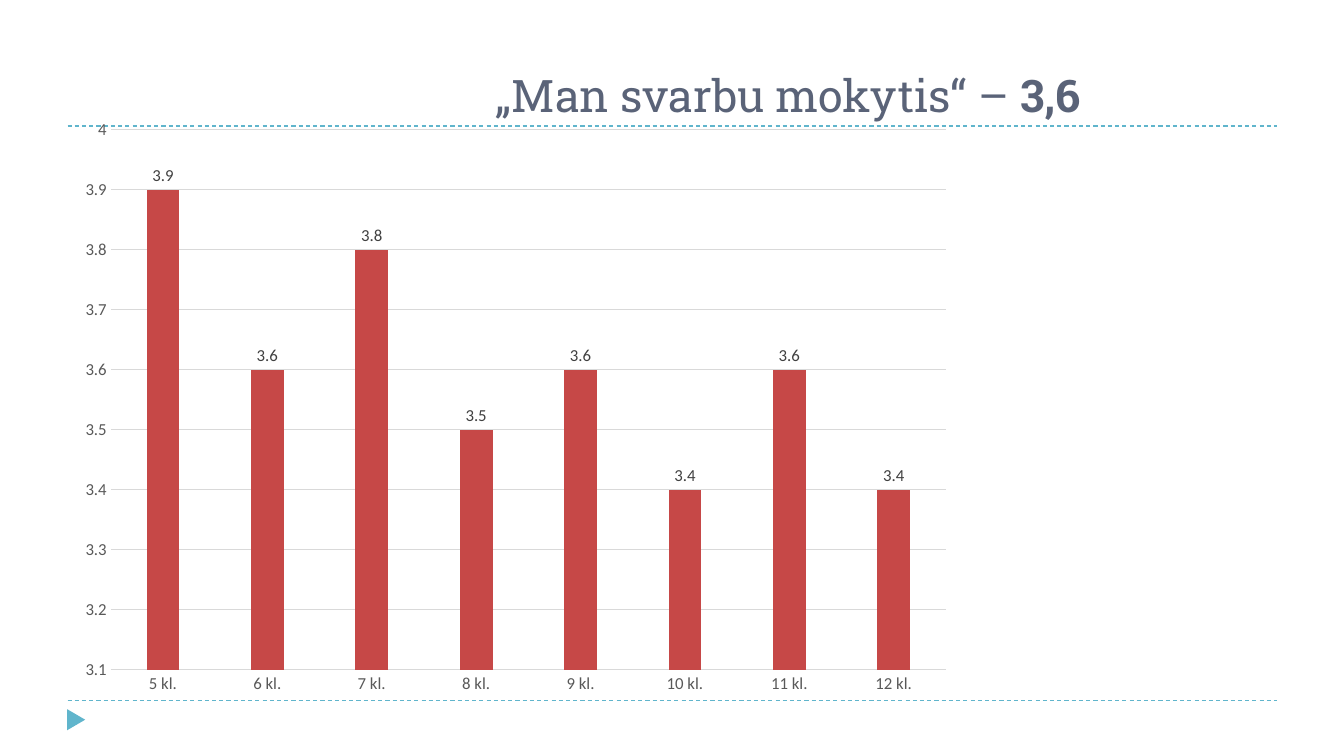
from lxml import etree
from pptx import Presentation
from pptx.chart.data import CategoryChartData
from pptx.dml.color import RGBColor
from pptx.enum.chart import XL_CHART_TYPE, XL_LABEL_POSITION, XL_TICK_MARK
from pptx.enum.dml import MSO_LINE
from pptx.enum.shapes import MSO_CONNECTOR, MSO_SHAPE
from pptx.enum.text import MSO_ANCHOR, PP_ALIGN
from pptx.oxml.ns import qn
from pptx.util import Inches, Pt

TEAL = RGBColor(0x60, 0xB5, 0xCC)
SLATE = RGBColor(0x5A, 0x63, 0x78)
RED = RGBColor(0xC6, 0x48, 0x47)
GRID_GRAY = RGBColor(0xD9, 0xD9, 0xD9)
AXIS_GRAY = RGBColor(0x59, 0x59, 0x59)
LABEL_GRAY = RGBColor(0x40, 0x40, 0x40)


def style_font(font, size, color, name="Calibri"):
    font.name = name
    font.size = Pt(size)
    font.color.rgb = color


prs = Presentation()
prs.slide_width = Inches(13.33)
prs.slide_height = Inches(7.5)
slide = prs.slides.add_slide(prs.slide_layouts[6])
shapes = slide.shapes

# Dashed rules and corner marker
for rule_y in (6.95, 1.25):
    rule = shapes.add_connector(MSO_CONNECTOR.STRAIGHT, Inches(0.67), Inches(rule_y),
                                Inches(12.67), Inches(rule_y))
    rule.line.color.rgb = TEAL
    rule.line.width = Pt(0.75)
    rule.line.dash_style = MSO_LINE.DASH
    etree.SubElement(rule._element.spPr, qn("a:effectLst"))

marker = shapes.add_shape(MSO_SHAPE.ISOSCELES_TRIANGLE, Inches(0.65), Inches(7.05),
                          Inches(0.21), Inches(0.18))
marker.rotation = 90
marker.shadow.inherit = False
marker.fill.solid()
marker.fill.fore_color.rgb = TEAL
marker.line.fill.background()

# Title
title = shapes.add_textbox(Inches(3.82), Inches(0.17), Inches(8), Inches(1.08))
title_frame = title.text_frame
title_frame.word_wrap = True
title_frame.vertical_anchor = MSO_ANCHOR.BOTTOM
heading = title_frame.paragraphs[0]
heading.alignment = PP_ALIGN.CENTER
for words, bold in (("„Man svarbu mokytis“ – ", False), ("3,6", True)):
    run = heading.add_run()
    run.text = words
    run.font.bold = bold
    style_font(run.font, 32, SLATE, "Roboto Slab")

# Average score by grade
scores = CategoryChartData()
scores.categories = [f"{grade} kl." for grade in range(5, 13)]
scores.add_series("Series 1", (3.9, 3.6, 3.8, 3.5, 3.6, 3.4, 3.6, 3.4))
chart = shapes.add_chart(XL_CHART_TYPE.COLUMN_CLUSTERED, Inches(0.67), Inches(1.07),
                         Inches(8.89), Inches(5.93), scores).chart
chart.has_title = False
chart.has_legend = False
chart.font.name = "Calibri"
chart.font.size = Pt(10)

plot = chart.plots[0]
plot.vary_by_categories = False
plot.gap_width = 219
plot.overlap = -27
bars = plot.series[0]
bars.format.fill.solid()
bars.format.fill.fore_color.rgb = RED
bar_labels = bars.data_labels
bar_labels.show_value = True
bar_labels.position = XL_LABEL_POSITION.OUTSIDE_END
style_font(bar_labels.font, 12, LABEL_GRAY)

grade_axis, score_axis = chart.category_axis, chart.value_axis
for axis in (grade_axis, score_axis):
    axis.major_tick_mark = XL_TICK_MARK.NONE
    axis.minor_tick_mark = XL_TICK_MARK.NONE
    style_font(axis.tick_labels.font, 12, AXIS_GRAY)

score_axis.minimum_scale = 3.1
score_axis.maximum_scale = 4
score_axis.major_unit = 0.1
score_axis.has_major_gridlines = True
score_axis.format.line.fill.background()
for line in (grade_axis.format.line, score_axis.major_gridlines.format.line):
    line.color.rgb = GRID_GRAY
    line.width = Pt(0.75)

prs.save("out.pptx")
